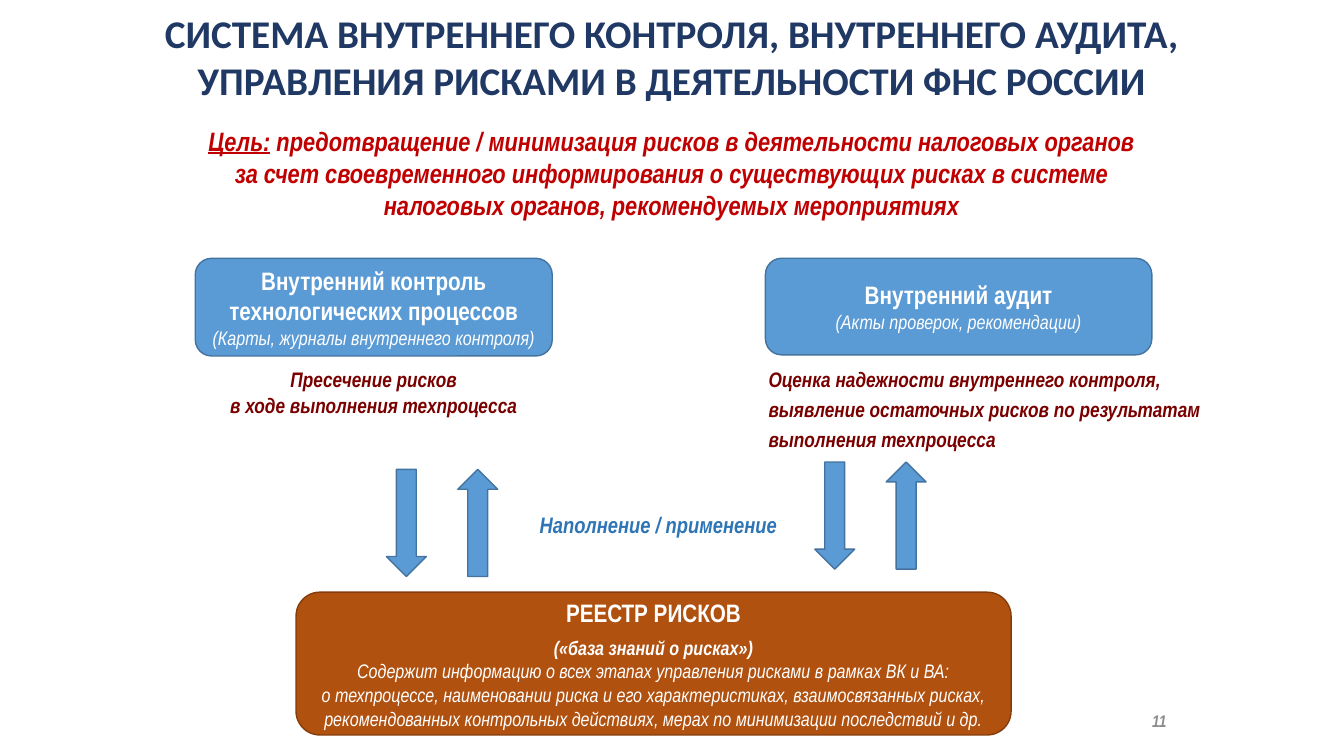
from pptx import Presentation
from pptx.dml.color import RGBColor
from pptx.enum.shapes import MSO_SHAPE as SHAPE
from pptx.enum.text import MSO_ANCHOR as ANCHOR, MSO_AUTO_SIZE as AUTO, PP_ALIGN as ALIGN
from pptx.util import Pt

PX = 9525
FONT = "Arial Narrow"
COLORS = {
    "title": "203864", "goal": "C00000", "note": "7A0000", "link": "2E75B6",
    "number": "8C8C8C", "white": "FFFFFF", "blue": "5B9BD5",
    "blue_line": "43739E", "brown": "B05110", "brown_line": "843C0B",
}


def write(sp, lines, color, align=ALIGN.CENTER, font=FONT):
    tf = sp.text_frame
    tf.auto_size = AUTO.NONE
    tf.word_wrap = True
    tf.vertical_anchor = ANCHOR.MIDDLE
    for i, (text, size, bold, italic) in enumerate(lines):
        p = tf.add_paragraph() if i else tf.paragraphs[0]
        p.text = text
        p.alignment = align
        p.font.name = font
        p.font.size = Pt(size)
        p.font.bold = bold
        p.font.italic = italic
        p.font.color.rgb = RGBColor.from_string(COLORS[color])
    return tf


def add_shape(kind, box, color):
    sp = s.shapes.add_shape(kind, *[n * PX for n in box])
    sp.shadow.inherit = False
    sp.fill.solid()
    sp.fill.fore_color.rgb = RGBColor.from_string(COLORS[color])
    sp.line.color.rgb = RGBColor.from_string(COLORS[color + "_line"])
    sp.line.width = Pt(1)
    return sp


prs = Presentation()
prs.slide_width = 1280 * PX
prs.slide_height = 720 * PX
s = prs.slides.add_slide(prs.slide_layouts[5])

title = s.shapes.title
title.left, title.top, title.width, title.height = [n * PX for n in (52, 12, 1175, 84)]
tf = write(title, [
    ("СИСТЕМА ВНУТРЕННЕГО КОНТРОЛЯ, ВНУТРЕННЕГО АУДИТА,", 28, True, False),
    ("УПРАВЛЕНИЯ РИСКАМИ В ДЕЯТЕЛЬНОСТИ ФНС РОССИИ", 28, True, False),
], "title", font="Calibri")
tf.word_wrap = False

blocks = [
    ((186, 246, 340, 93), "blue", [
        ("Внутренний контроль технологических процессов", 18, True, False),
        ("(Карты, журналы внутреннего контроля)", 14, False, True),
    ]),
    ((729, 246, 368, 92), "blue", [
        ("Внутренний аудит", 18, True, False),
        ("(Акты проверок, рекомендации)", 14, False, True),
    ]),
    ((282, 564, 681, 136), "brown", [
        ("РЕЕСТР РИСКОВ", 18, True, False),
        ("(«база знаний о рисках»)", 14, True, True),
        ("Содержит информацию о всех этапах управления рисками в рамках ВК и ВА:", 14, False, True),
        ("о техпроцессе, наименовании риска и его характеристиках, взаимосвязанных рисках, "
         "рекомендованных контрольных действиях, мерах по минимизации последствий и др.",
         14, False, True),
    ]),
]
for box, color, lines in blocks:
    registry = write(add_shape(SHAPE.ROUNDED_RECTANGLE, box, color), lines, "white")
registry.paragraphs[0].space_after = Pt(6)

for x, y in ((368, 447), (776, 440)):
    add_shape(SHAPE.DOWN_ARROW, (x, y, 38, 102), "blue")
    add_shape(SHAPE.UP_ARROW, (x + 68, y, 38, 102), "blue")

labels = [
    ((186, 334, 340, 79), "note", 15, ALIGN.CENTER, 1,
     ["Пресечение рисков", "в ходе выполнения техпроцесса"]),
    ((722, 339, 434, 97), "note", 15, ALIGN.LEFT, 1.2,
     ["Оценка надежности внутреннего контроля,",
      "выявление остаточных рисков по результатам выполнения техпроцесса"]),
    ((504, 473, 265, 53), "link", 16, ALIGN.LEFT, 1, ["Наполнение / применение"]),
    ((1061, 652, 60, 68), "number", 12, ALIGN.RIGHT, 1, ["11"]),
    ((171, 113, 937, 103), "goal", 19, ALIGN.CENTER, 1,
     ["Цель:",
      "за счет своевременного информирования о существующих рисках в системе "
      "налоговых органов, рекомендуемых мероприятиях"]),
]
for box, color, size, align, spacing, texts in labels:
    sp = s.shapes.add_textbox(*[n * PX for n in box])
    goal = write(sp, [(text, size, True, True) for text in texts], color, align)
    goal.margin_left = goal.margin_right = 10 * PX
    goal.margin_top = goal.margin_bottom = 6 * PX
    for p in goal.paragraphs:
        p.line_spacing = spacing

p = goal.paragraphs[0]
p.runs[0].font.underline = True
r = p.add_run()
r.text = " предотвращение / минимизация рисков в деятельности налоговых органов"

prs.save("out.pptx")
